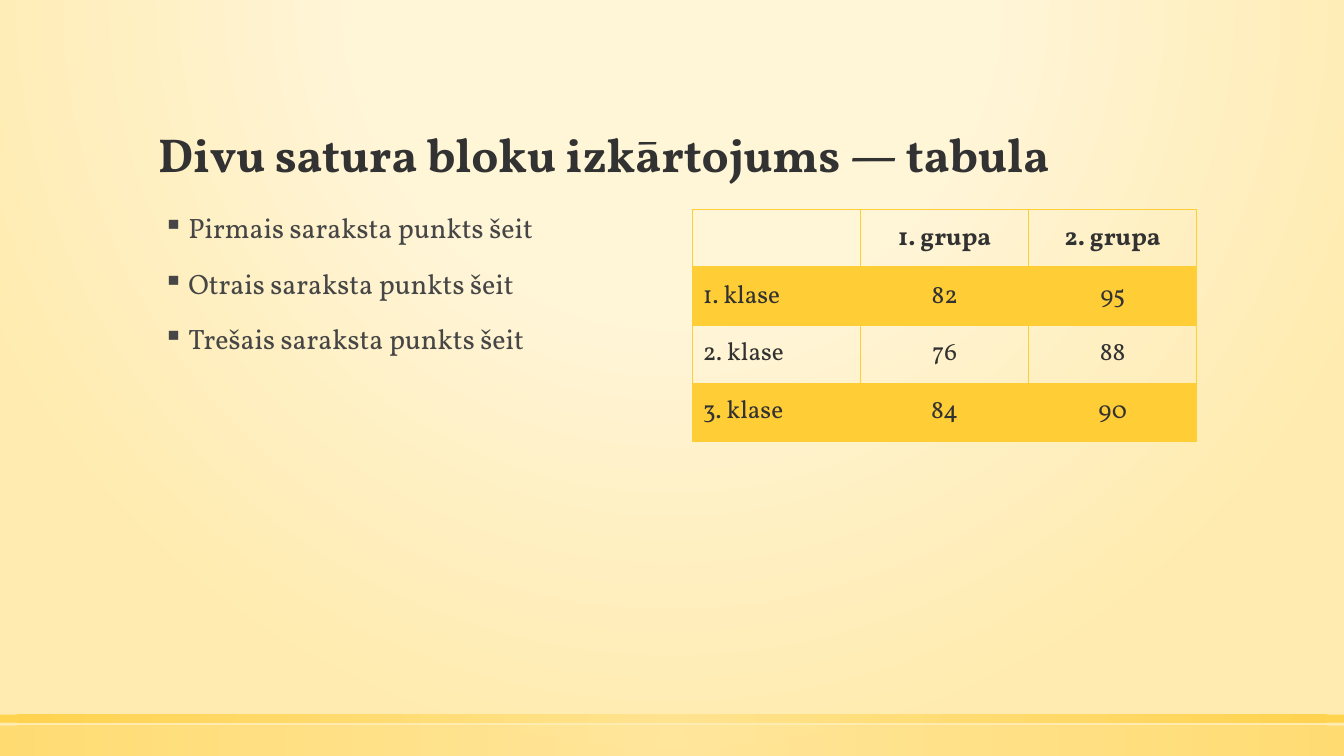
from lxml import etree
from pptx import Presentation
from pptx import oxml, util as u
from pptx.dml.color import RGBColor
from pptx.enum import shapes, text
from pptx.oxml import ns

WIDE, HIGH = 13.33, 7.5
HUES = {"ink": "323232", "soft": "464646", "gold": "FFCD36",
        "lemon": "FFE186", "cream": "FFF5D7", "sand": "FFEBAF"}
HEAD = {"name": "Vollkorn", "size": u.Pt(34), "bold": True, "hue": "ink"}
ITEM = {"name": "Vollkorn", "size": u.Pt(20), "bold": False, "hue": "soft"}
CELL = {"name": "Vollkorn", "size": u.Pt(18), "bold": False, "hue": "ink"}
POINTS = ["Pirmais saraksta punkts šeit", "Otrais saraksta punkts šeit",
          "Trešais saraksta punkts šeit"]
ROWS = [["", "1. grupa", "2. grupa"], ["1. klase", "82", "95"],
        ["2. klase", "76", "88"], ["3. klase", "84", "90"]]


def inch(box):
    return [u.Inches(side) for side in box]


def apply(item, looks):
    for key, val in looks.items():
        setattr(item, key, val)


def style(font, looks):
    apply(font, {key: val for key, val in looks.items() if key != "hue"})
    font.color.rgb = RGBColor.from_string(HUES[looks["hue"]])


def tint(hue, alpha=100):
    return (f'<a:srgbClr val="{HUES[hue]}">'
            f'<a:alpha val="{alpha * 1000}"/></a:srgbClr>')


def glow(fill, host, stops, focus):
    fill.gradient()
    old = host.find(".//" + ns.qn("a:gradFill"))
    marks = "".join(f'<a:gs pos="{at * 1000}">{tint(hue, alpha)}</a:gs>'
                    for at, hue, alpha in stops)
    rect = " ".join(f'{side}="{val * 1000}"' for side, val in zip("ltrb", focus))
    new = oxml.parse_xml(
        f'<a:gradFill {ns.nsdecls("a")} rotWithShape="1"><a:gsLst>{marks}</a:gsLst>'
        f'<a:path path="circle"><a:fillToRect {rect}/></a:path></a:gradFill>')
    old.getparent().replace(old, new)


def back(slide):
    glow(slide.background.fill, slide.element,
         [(0, "cream", 59), (40, "cream", 66), (100, "sand", 100)],
         (50, -80, 50, 180))


def band(slide, box, alpha):
    bar = slide.shapes.add_shape(shapes.MSO_SHAPE.RECTANGLE, *inch(box))
    bar.shadow.inherit = False
    bar.line.fill.background()
    glow(bar.fill, bar.element,
         [(0, "lemon", alpha), (100, "gold", alpha)], (50, 50, 50, 50))


def words(slide, box, lines, looks, anchor, para):
    frame = slide.shapes.add_textbox(*inch(box)).text_frame
    apply(frame, {"word_wrap": True, "vertical_anchor": anchor})
    for num, line in enumerate(lines):
        part = frame.add_paragraph() if num else frame.paragraphs[0]
        apply(part, para)
        run = part.add_run()
        run.text = line
        style(run.font, looks)
    return frame.paragraphs


def title(slide, box):
    words(slide, box, ["Divu satura bloku izkārtojums — tabula"], HEAD,
          text.MSO_ANCHOR.BOTTOM, {"line_spacing": 0.9})


def points(slide, box):
    paras = words(slide, box, POINTS, ITEM, text.MSO_ANCHOR.TOP,
                  {"line_spacing": 0.9, "space_before": u.Pt(18)})
    for para in paras:
        props = para._p.get_or_add_pPr()
        props.set("marL", str(u.Inches(0.3)))
        props.set("indent", str(u.Inches(-0.25)))
        etree.SubElement(props, ns.qn("a:buChar")).set("char", "▪")


def edge(cell, thick):
    props = cell._tc.get_or_add_tcPr()
    for num, side in enumerate("LRTB"):
        width = u.Pt(2 if side == thick else 1)
        props.insert(num, oxml.parse_xml(
            f'<a:ln{side} {ns.nsdecls("a")} w="{width}"><a:solidFill>'
            f'{tint("gold")}</a:solidFill></a:ln{side}>'))


def shade(cell, tinted):
    if not tinted:
        cell.fill.background()
        return
    cell.fill.solid()
    cell.fill.fore_color.rgb = RGBColor.from_string(HUES["gold"])
    color = cell._tc.find(".//" + ns.qn("a:srgbClr"))
    etree.SubElement(color, ns.qn("a:alpha")).set("val", "20000")


def grid(slide, box):
    table = slide.shapes.add_table(len(ROWS), len(ROWS[0]), *inch(box)).table
    apply(table, {"first_row": False, "horz_banding": False})
    for row, line in enumerate(ROWS):
        for col, word in enumerate(line):
            cell = table.cell(row, col)
            cell.vertical_anchor = text.MSO_ANCHOR.MIDDLE
            para = cell.text_frame.paragraphs[0]
            para.alignment = text.PP_ALIGN.CENTER if col else text.PP_ALIGN.LEFT
            style(para.font, CELL)
            if word:
                run = para.add_run()
                run.text = word
                style(run.font, {**CELL, "bold": row == 0})
            shade(cell, row % 2)
            edge(cell, {0: "B", 1: "T"}.get(row))


def build(slide):
    left, top, half, full = 1.47, 2.08, 5, 10.4
    back(slide)
    band(slide, (0, HIGH * 0.96, WIDE, HIGH * 0.04), 50)
    band(slide, (0, 7.09, WIDE, 0.08), 80)
    title(slide, (left, 0.51, full, 1.35))
    points(slide, (left, top, half, 4.51))
    grid(slide, (left + full - half, top, half, 2.3))


def main():
    deck = Presentation()
    apply(deck, {"slide_width": u.Inches(WIDE), "slide_height": u.Inches(HIGH)})
    build(deck.slides.add_slide(deck.slide_layouts[6]))
    deck.save("out.pptx")


if __name__ == "__main__":
    main()
